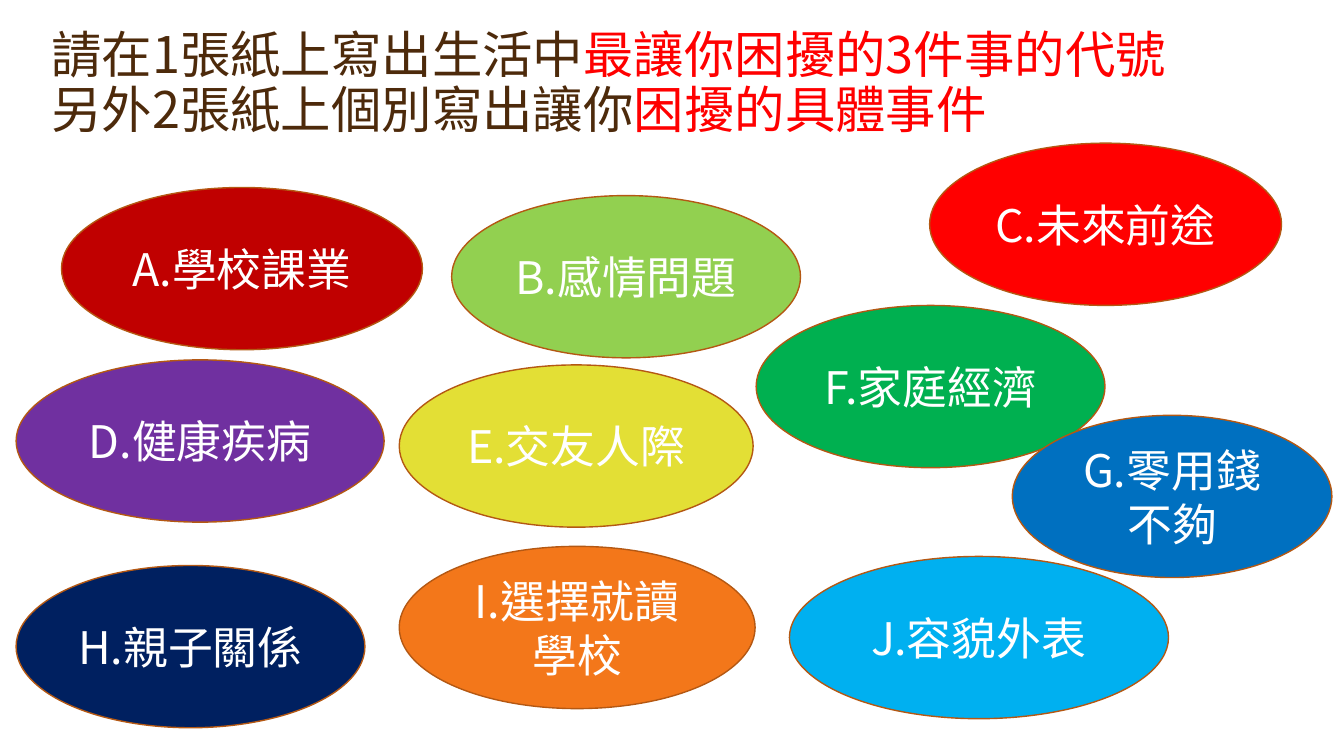
"""Builds the slide that asks for the three most troubling matters in life."""
import pptx
import pptx.util
import pptx.dml.color
import pptx.enum.shapes
import pptx.enum.text
import pptx.oxml
import pptx.oxml.ns

Inches, Pt = pptx.util.Inches, pptx.util.Pt
RGB = pptx.dml.color.RGBColor.from_string
ALIGN = pptx.enum.text.PP_ALIGN
ANCHOR = pptx.enum.text.MSO_ANCHOR

FONT = "Noto Sans CJK SC"
COLORS = {
    "brown": "4D2A0B", "bright red": "FF0000", "white": "FFFFFF",
    "outline": "B45813", "dark red": "C00000", "orange": "F3771A",
    "green": "00B050", "blue": "0070C0", "light green": "92D050",
    "sky": "00B0F0", "yellow": "E3DF35", "purple": "7030A0",
    "navy": "002060",
}
TITLE_BOX = (0.41, 0.1, 11.79, 1.33)
TITLE_LINES = [
    [("請在1張紙上寫出生活中", "brown"), ("最讓你困擾的3件事的代號", "bright red")],
    [("另外2張紙上個別寫出讓你", "brown"), ("困擾的具體事件", "bright red")],
]
OVAL_HEIGHT = 1.61
TROUBLES = [
    ("A.學校課業", "dark red", 0.61, 1.86, 3.58),
    ("C.未來前途", "bright red", 9.22, 1.42, 3.49),
    ("I.選擇就讀學校", "orange", 3.96, 5.42, 3.53),
    ("F.家庭經濟", "green", 7.5, 3.03, 3.46),
    ("G.零用錢不夠", "blue", 10.04, 4.12, 3.17),
    ("B.感情問題", "light green", 4.48, 1.94, 3.46),
    ("J.容貌外表", "sky", 7.83, 5.52, 3.76),
    ("E.交友人際", "yellow", 3.96, 3.62, 3.51),
    ("D.健康疾病", "purple", 0.16, 3.57, 3.65),
    ("H.親子關係", "navy", 0.16, 5.61, 3.46),
]


def set_all(obj, values):
    for name, value in values.items():
        setattr(obj, name, value)


def add_run(p, text, size, color):
    r = p.add_run()
    r.text = text
    set_all(r.font, {"size": Pt(size), "name": FONT})
    r.font.color.rgb = RGB(COLORS[color])
    rPr = r.font._element
    rPr.set("lang", "zh-TW")
    ea = pptx.oxml.parse_xml(
        f'<a:ea {pptx.oxml.ns.nsdecls("a")} typeface="{FONT}"/>')
    rPr.find(pptx.oxml.ns.qn("a:latin")).addnext(ea)


def add_title(s):
    tf = s.shapes.add_textbox(*map(Inches, TITLE_BOX)).text_frame
    set_all(tf, {"word_wrap": True, "vertical_anchor": ANCHOR.BOTTOM})
    p = tf.paragraphs[0]
    p.line_spacing = 0.9
    for number, line in enumerate(TITLE_LINES):
        if number:
            p.add_line_break()
        for text, color in line:
            add_run(p, text, 36, color)


def add_oval(s, text, color, left, top, width):
    sp = s.shapes.add_shape(
        pptx.enum.shapes.MSO_SHAPE.OVAL,
        *map(Inches, (left, top, width, OVAL_HEIGHT)))
    sp.shadow.inherit = False
    sp.fill.solid()
    sp.fill.fore_color.rgb = RGB(COLORS[color])
    sp.line.color.rgb = RGB(COLORS["outline"])
    sp.line.width = Pt(1)
    tf = sp.text_frame
    set_all(tf, {"word_wrap": True, "vertical_anchor": ANCHOR.MIDDLE})
    p = tf.paragraphs[0]
    p.alignment = ALIGN.CENTER
    add_run(p, text, 32, "white")


def main():
    prs = pptx.Presentation()
    set_all(prs, {"slide_width": Inches(13.33), "slide_height": Inches(7.5)})
    s = prs.slides.add_slide(prs.slide_layouts[6])
    add_title(s)
    for trouble in TROUBLES:
        add_oval(s, *trouble)
    prs.save("out.pptx")


if __name__ == "__main__":
    main()
